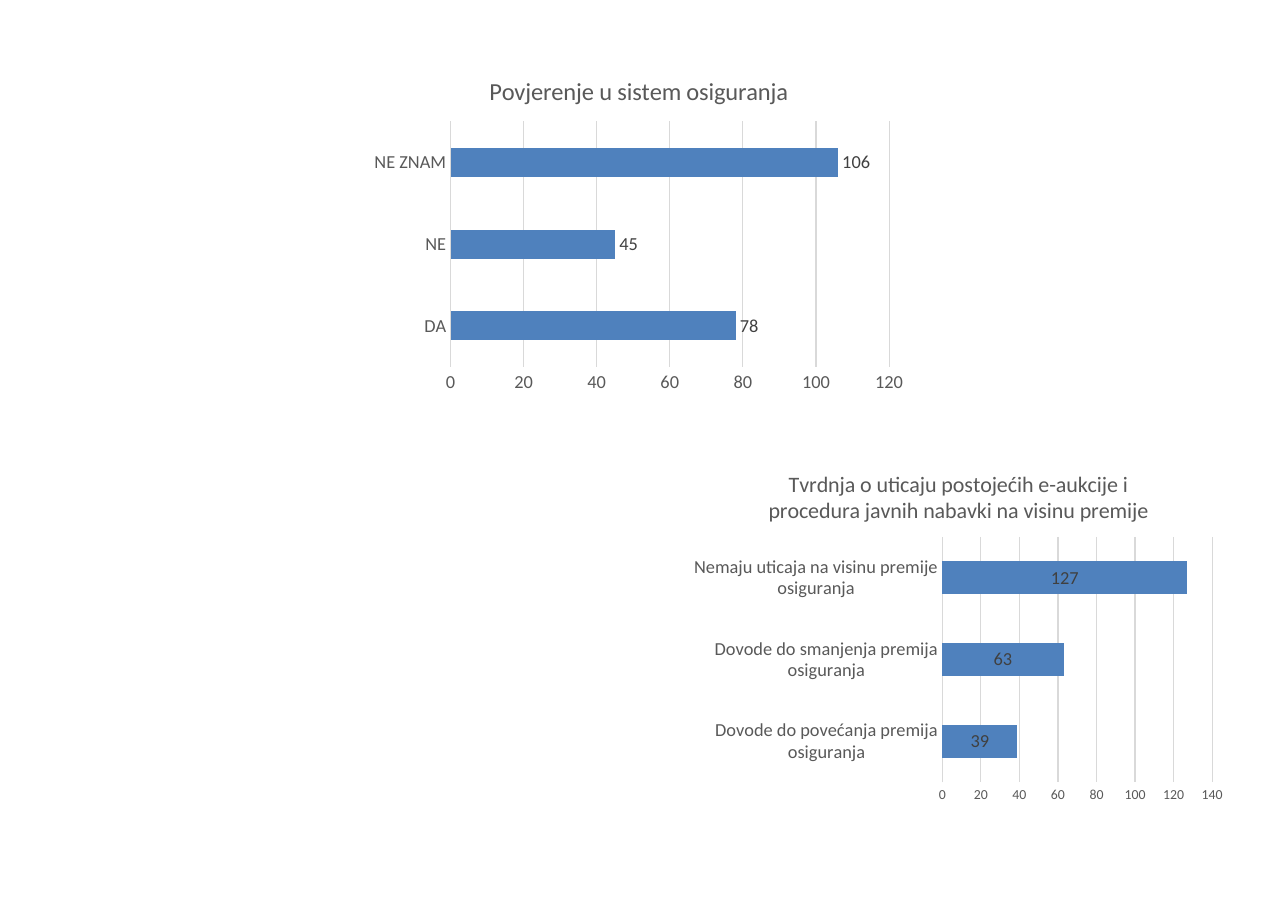
from dataclasses import dataclass

from pptx import Presentation
from pptx.chart.data import CategoryChartData
from pptx.dml.color import RGBColor
from pptx.enum.chart import XL_CHART_TYPE, XL_LABEL_POSITION, XL_TICK_MARK
from pptx.oxml import parse_xml
from pptx.oxml.ns import nsdecls
from pptx.util import Cm, Pt

CLUSTERED = XL_CHART_TYPE.BAR_CLUSTERED
STACKED = XL_CHART_TYPE.BAR_STACKED
OUTSIDE = XL_LABEL_POSITION.OUTSIDE_END
CENTER = XL_LABEL_POSITION.CENTER
NO_TICK = XL_TICK_MARK.NONE

FONT = "Calibri"
COLORS = {
    "background": "FFFFFF",
    "bar": "4F81BD",
    "grid": "D9D9D9",
    "text": "595959",
    "label": "404040",
    "base": "000000",
}


@dataclass
class BarChart:
    title: str
    series: str
    values: dict[str, int]
    left: float
    top: float
    height: float
    kind: int
    gap: int
    overlap: int
    label_position: int
    title_size: float
    scale_size: float
    maximum: int


CHARTS = [
    BarChart(
        title="Tvrdnja o uticaju postojećih e-aukcije i\nprocedura javnih nabavki na visinu premije",
        series="Series 1",
        values={
            "Dovode do povećanja premija osiguranja": 39,
            "Dovode do smanjenja premija osiguranja": 63,
            "Nemaju uticaja na visinu premije osiguranja": 127,
        },
        left=15.75, top=10.44, height=8.23, kind=STACKED, gap=150, overlap=100,
        label_position=CENTER, title_size=14.4, scale_size=9, maximum=140,
    ),
    BarChart(
        title="Povjerenje u sistem osiguranja",
        series="Povjerenje u sistem osiguranja",
        values={"DA": 78, "NE": 45, "NE ZNAM": 106},
        left=8.38, top=1.32, height=7.9, kind=CLUSTERED, gap=182, overlap=0,
        label_position=OUTSIDE, title_size=16, scale_size=12, maximum=120,
    ),
]


def color(name: str) -> RGBColor:
    return RGBColor.from_string(COLORS[name])


def set_font(font, size: float, color_name: str) -> None:
    font.name = FONT
    font.size = Pt(size)
    font.bold = False
    font.color.rgb = color(color_name)


def write_text(frame, text: str, *, size: float, color_name: str) -> None:
    frame.text = text
    for para in frame.paragraphs:
        for span in para.runs:
            set_font(span.font, size, color_name)


def set_line(line) -> None:
    line.color.rgb = color("grid")
    line.width = Pt(0.75)


def style_axis(axis, size: float) -> None:
    axis.major_tick_mark = NO_TICK
    axis.minor_tick_mark = NO_TICK
    set_font(axis.tick_labels.font, size, "text")


def draw_chart(page, item: BarChart) -> None:
    data = CategoryChartData()
    data.categories = list(item.values)
    data.add_series(item.series, list(item.values.values()))
    chart = page.shapes.add_chart(
        item.kind, Cm(item.left), Cm(item.top), Cm(12.7), Cm(item.height), data
    ).chart

    # Title, base font and background
    set_font(chart.font, 10, "base")
    chart.has_legend = False
    chart.has_title = True
    write_text(chart.chart_title.text_frame, item.title,
               size=item.title_size, color_name="text")
    chart.chart_title.include_in_layout = False
    background = parse_xml(
        f'<c:spPr {nsdecls("c", "a")}><a:solidFill>'
        f'<a:srgbClr val="{COLORS["background"]}"/></a:solidFill>'
        '<a:ln><a:noFill/></a:ln></c:spPr>'
    )
    chart.element.chart.addnext(background)

    # Axes
    style_axis(chart.category_axis, 12)
    set_line(chart.category_axis.format.line)
    scale = chart.value_axis
    style_axis(scale, item.scale_size)
    scale.format.line.fill.background()
    scale.has_major_gridlines = True
    set_line(scale.major_gridlines.format.line)
    scale.minimum_scale = 0
    scale.maximum_scale = item.maximum
    scale.major_unit = 20

    # Bars and their values
    plot = chart.plots[0]
    plot.vary_by_categories = False
    plot.gap_width = item.gap
    plot.overlap = item.overlap
    bars = plot.series[0]
    bars.format.fill.solid()
    bars.format.fill.fore_color.rgb = color("bar")
    labels = bars.data_labels
    labels.show_value = True
    labels.position = item.label_position
    set_font(labels.font, 12, "label")


def main() -> None:
    deck = Presentation()
    deck.slide_width = Cm(29.7)
    deck.slide_height = Cm(21)
    page = deck.slides.add_slide(deck.slide_layouts[6])
    for item in CHARTS:
        draw_chart(page, item)
    deck.save("out.pptx")


if __name__ == "__main__":
    main()
